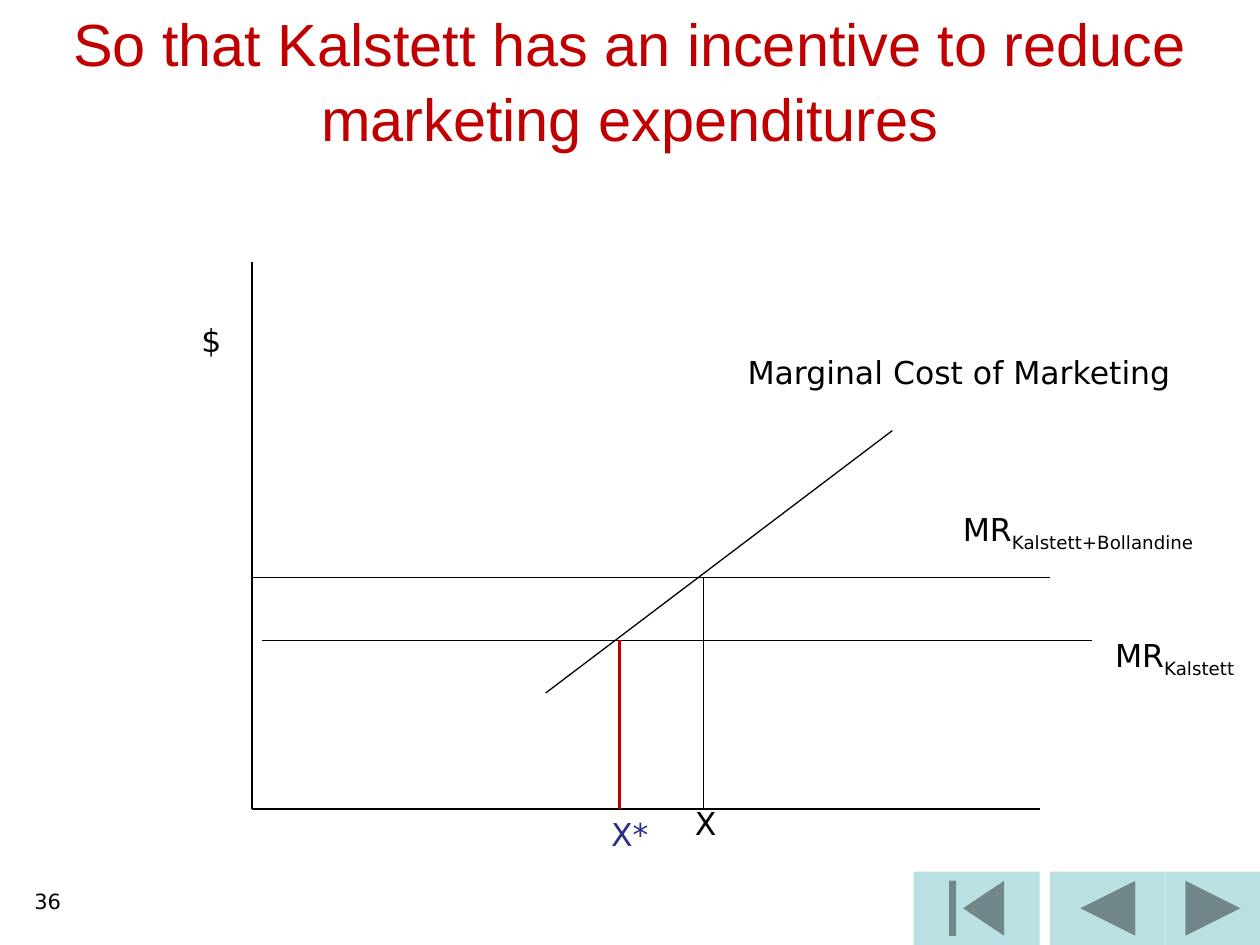
from dataclasses import dataclass

from lxml import etree
from pptx import Presentation
from pptx.dml.color import RGBColor
from pptx.enum.shapes import MSO_CONNECTOR, MSO_SHAPE
from pptx.enum.text import MSO_ANCHOR, PP_ALIGN
from pptx.oxml.ns import qn
from pptx.util import Cm, Pt

STRAIGHT = MSO_CONNECTOR.STRAIGHT
BACK = MSO_SHAPE.ACTION_BUTTON_BACK_OR_PREVIOUS
FIRST = MSO_SHAPE.ACTION_BUTTON_BEGINNING
NEXT = MSO_SHAPE.ACTION_BUTTON_FORWARD_OR_NEXT
TOP, MIDDLE = MSO_ANCHOR.TOP, MSO_ANCHOR.MIDDLE
LEFT, CENTER, RIGHT = PP_ALIGN.LEFT, PP_ALIGN.CENTER, PP_ALIGN.RIGHT

BLACK, RED, BLUE, TEAL = "000000", "C00000", "2D2D8A", "BBE0E3"

# Chart positions in cm
AXIS_X, AXIS_Y = 5.08, 16.31
HIGH_Y, LOW_Y = 11.64, 12.91
JOINT_X, SOLO_X = 14.18, 12.49


@dataclass
class Line:
    x1: float
    y1: float
    x2: float
    y2: float
    color: str = BLACK
    width: float = 0.75


@dataclass
class Label:
    text: str
    x: float
    y: float
    w: float
    h: float = 1.02
    sub: str = ""
    size: float = 18
    font: str = "DejaVu Sans"
    color: str = BLACK
    align: PP_ALIGN = LEFT
    anchor: MSO_ANCHOR = TOP
    wrap: bool = True
    space: float = 1.0


@dataclass
class Button:
    kind: MSO_SHAPE
    x: float
    w: float


BUTTONS = [Button(BACK, 21.17, 2.33), Button(FIRST, 18.42, 2.54), Button(NEXT, 23.5, 1.9)]

LINES = [
    Line(AXIS_X, 5.29, AXIS_X, AXIS_Y),
    Line(AXIS_X, AXIS_Y, 20.96, AXIS_Y),
    Line(AXIS_X, HIGH_Y, 21.17, HIGH_Y),
    Line(11, 13.97, 17.99, 8.68),
    Line(JOINT_X, HIGH_Y, JOINT_X, AXIS_Y),
    Line(5.29, LOW_Y, 22.01, LOW_Y),
    Line(SOLO_X, LOW_Y, SOLO_X, AXIS_Y, RED, 2),
]

LABELS = [
    Label("So that Kalstett has an incentive to reduce marketing expenditures",
          0, 0, 25.4, 3.18, size=34, font="Arial", color=RED,
          align=CENTER, anchor=MIDDLE, space=1.05),
    Label("36", -3.81, 17.78, 5.29, 1.27, size=12, align=RIGHT),
    Label("$", 3.81, 6.35, 4.95),
    Label("Marginal Cost of Marketing", 14.82, 6.99, 9.17),
    Label("X", 13.76, 16.09, 1.37, 1.07),
    Label("MR", 22.23, 12.7, 3.05, sub="Kalstett", wrap=False),
    Label("X*", 12.07, 16.31, 1.37, color=BLUE, wrap=False),
    Label("MR", 19.16, 10.16, 5.54, sub="Kalstett+Bollandine", wrap=False),
]


def paint(target, color: str) -> None:
    """Give a fill or a line's fill one solid colour."""
    target.solid()
    target.fore_color.rgb = RGBColor.from_string(color)


def draw_line(slide, line: Line) -> None:
    item = slide.shapes.add_connector(
        STRAIGHT, Cm(line.x1), Cm(line.y1), Cm(line.x2), Cm(line.y2))
    paint(item.line.fill, line.color)
    item.line.width = Pt(line.width)
    etree.SubElement(item._element.spPr, qn("a:effectLst"))


def draw_label(slide, label: Label) -> None:
    box = slide.shapes.add_textbox(Cm(label.x), Cm(label.y), Cm(label.w), Cm(label.h))
    frame = box.text_frame
    frame.word_wrap = label.wrap
    frame.vertical_anchor = label.anchor
    frame.text = label.text
    para = frame.paragraphs[0]
    para.alignment = label.align
    para.line_spacing = label.space
    if label.sub:
        run = para.add_run()
        run.text = label.sub
        run._r.get_or_add_rPr().set("baseline", "-25000")
    for run in para.runs:
        run.font.name = label.font
        run.font.size = Pt(label.size)
        paint(run.font.fill, label.color)


def draw_button(slide, button: Button) -> None:
    shape = slide.shapes.add_shape(
        button.kind, Cm(button.x), Cm(17.57), Cm(button.w), Cm(1.48))
    shape.shadow.inherit = False
    paint(shape.fill, TEAL)
    shape.line.fill.background()


def main() -> None:
    deck = Presentation()
    deck.slide_width, deck.slide_height = Cm(25.4), Cm(19.05)
    slide = deck.slides.add_slide(deck.slide_layouts[6])
    for button in BUTTONS:
        draw_button(slide, button)
    for line in LINES:
        draw_line(slide, line)
    for label in LABELS:
        draw_label(slide, label)
    deck.save("out.pptx")


if __name__ == "__main__":
    main()
